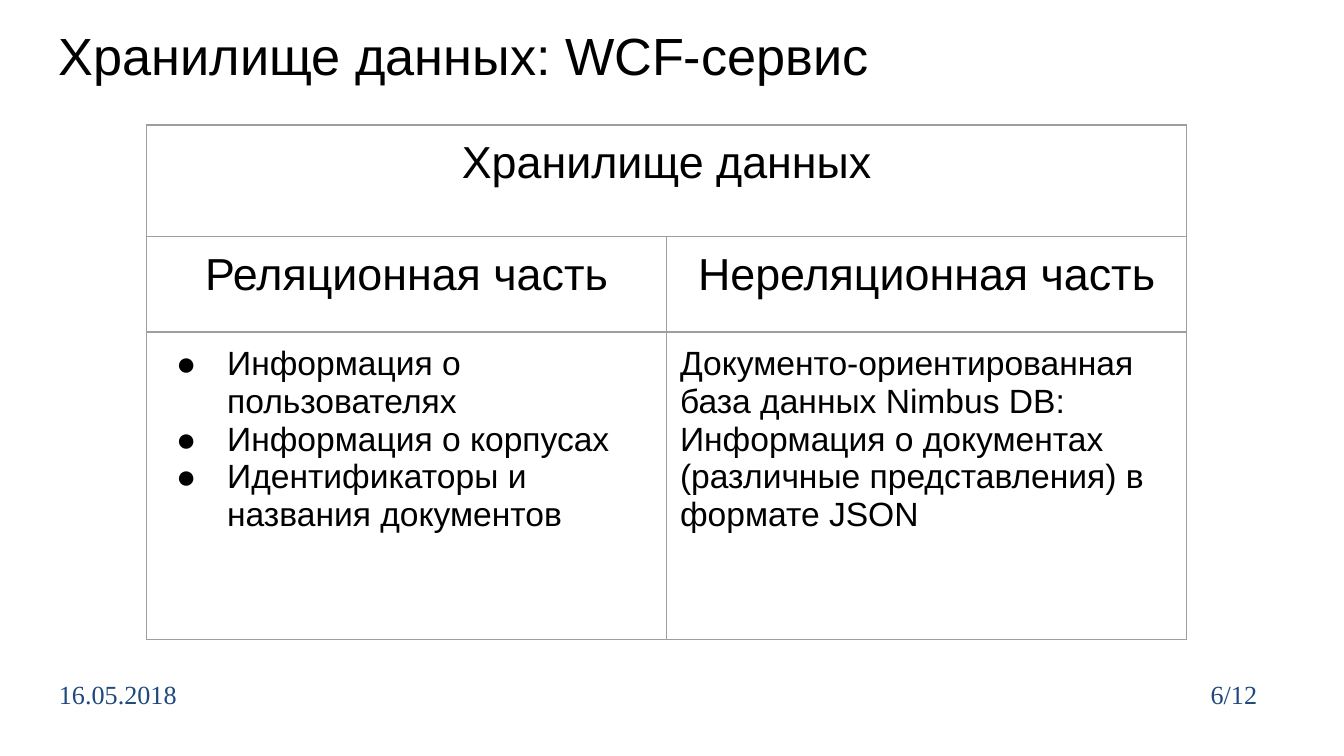
"""Builds the slide on the data storage behind a WCF service."""
from lxml import etree
from pptx import Presentation
from pptx.dml.color import RGBColor
from pptx.enum.text import PP_ALIGN
from pptx.oxml.ns import qn
from pptx.util import Inches, Pt

LEFT, CENTER = PP_ALIGN.LEFT, PP_ALIGN.CENTER
BLACK = RGBColor(0x00, 0x00, 0x00)
NAVY = RGBColor(0x1F, 0x49, 0x7D)
GRAY = RGBColor(0x9E, 0x9E, 0x9E)

SLIDE_WIDTH = 10
SLIDE_HEIGHT = SLIDE_WIDTH * 9 / 16
FOOTER = {"font": "Times New Roman", "size": 14, "color": NAVY, "pad": 0.05}
TEXTS = [
    ("Хранилище данных: WCF-сервис", (0.34, 0.07, 9.32, 0.63), {"size": 28}),
    ("16.05.2018", (0.34, 5, 2.5, 0.4), FOOTER),
    ("6/12", (8.91, 5, 0.74, 0.4), FOOTER),
]

HEADING = {"size": 24, "align": CENTER}
BODY = {"size": 18}
TABLE_LEFT, TABLE_TOP = 1.09, 0.93
COLUMN_WIDTHS = [3.87, 3.87]
ROW_HEIGHTS = [0.83, 0.71, 2.29]
ROWS = [
    [(["Хранилище данных"], HEADING), ([], HEADING)],
    [(["Реляционная часть"], HEADING), (["Нереляционная часть"], HEADING)],
    [
        (["Информация о пользователях",
          "Информация о корпусах",
          "Идентификаторы и названия документов"], {**BODY, "bullet": "●"}),
        (["Документо-ориентированная база данных Nimbus DB:",
          "Информация о документах (различные представления) в формате JSON"], BODY),
    ],
]


def add_bullet(para, bullet, size, font, color):
    """Give a paragraph a hanging bullet that matches its text."""
    props = para._p.get_or_add_pPr()
    props.set("marL", str(Inches(0.5)))
    props.set("indent", str(Inches(-0.38)))
    tint = etree.SubElement(props, qn("a:buClr"))
    etree.SubElement(tint, qn("a:srgbClr"), val=str(color))
    etree.SubElement(props, qn("a:buSzPts"), val=str(size * 100))
    etree.SubElement(props, qn("a:buFont"), typeface=font)
    etree.SubElement(props, qn("a:buChar"), char=bullet)


def write(frame, lines, size, font="Arial", color=BLACK, align=LEFT, bullet=None):
    """Fill a text frame with one paragraph per line."""
    for index, line in enumerate(lines):
        para = frame.add_paragraph() if index else frame.paragraphs[0]
        para.alignment = align
        span = para.add_run()
        span.text = line
        span.font.name, span.font.size = font, Pt(size)
        span.font.color.rgb = color
        if bullet:
            add_bullet(para, bullet, size, font, color)


def set_margins(holder, across, down):
    """Set the inner margins of a text frame or a cell."""
    holder.margin_left = holder.margin_right = Inches(across)
    holder.margin_top = holder.margin_bottom = Inches(down)


def add_text(page, text, place, pad=0.1, **style):
    """Add a text box at the given place."""
    frame = page.shapes.add_textbox(*map(Inches, place)).text_frame
    frame.word_wrap = True
    set_margins(frame, 0.1, pad)
    write(frame, [text], **style)


def add_borders(cell):
    """Draw a thin gray line on each side of a cell."""
    props = cell._tc.get_or_add_tcPr()
    for index, side in enumerate(("a:lnL", "a:lnR", "a:lnT", "a:lnB")):
        line = etree.Element(qn(side), w=str(Pt(0.75)))
        fill = etree.SubElement(line, qn("a:solidFill"))
        etree.SubElement(fill, qn("a:srgbClr"), val=str(GRAY))
        props.insert(index, line)


def add_storage_table(page):
    """Add the table that splits the storage into two parts."""
    table = page.shapes.add_table(
        len(ROWS), len(COLUMN_WIDTHS), Inches(TABLE_LEFT), Inches(TABLE_TOP),
        Inches(sum(COLUMN_WIDTHS)), Inches(sum(ROW_HEIGHTS))).table
    table.first_row = table.horz_banding = False
    for column, width in zip(table.columns, COLUMN_WIDTHS):
        column.width = Inches(width)
    for row, height, contents in zip(table.rows, ROW_HEIGHTS, ROWS):
        row.height = Inches(height)
        for cell, (lines, style) in zip(row.cells, contents):
            set_margins(cell, 0.1, 0.1)
            cell.fill.background()
            add_borders(cell)
            write(cell.text_frame, lines, **style)
    table.cell(0, 0).merge(table.cell(0, len(COLUMN_WIDTHS) - 1))


def main():
    """Build and save the deck."""
    deck = Presentation()
    deck.slide_width, deck.slide_height = Inches(SLIDE_WIDTH), Inches(SLIDE_HEIGHT)
    page = deck.slides.add_slide(deck.slide_layouts[6])
    for text, place, style in TEXTS:
        add_text(page, text, place, **style)
    add_storage_table(page)
    deck.save("out.pptx")


if __name__ == "__main__":
    main()
